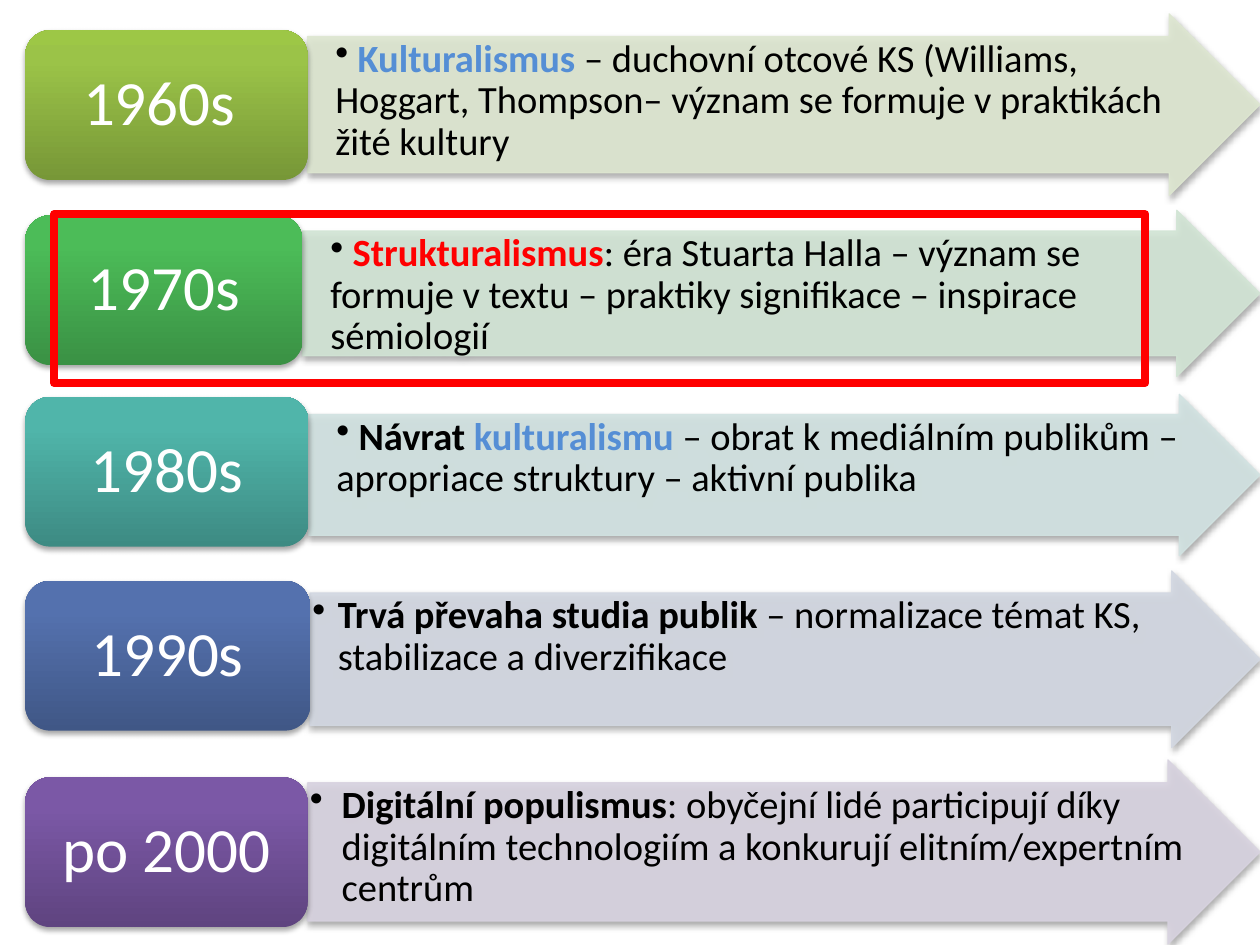
from lxml.etree import SubElement
from pptx import Presentation
from pptx.dml.color import RGBColor
from pptx.enum.shapes import MSO_SHAPE
from pptx.enum.text import MSO_ANCHOR, PP_ALIGN
from pptx.oxml import parse_xml
from pptx.oxml.ns import nsdecls, qn
from pptx.util import Cm, Pt

SLIDE_WIDTH, SLIDE_HEIGHT = 25.4, 19.05
CARD_LEFT, CARD_HEIGHT = 0.51, 3.02
BLACK, WHITE, RED, BLUE = "000000", "FFFFFF", "FF0000", "558ED5"


def rgb(value):
    return RGBColor.from_string(value)


class TimelineSlide:
    """Holds the style and the slide on which the decades are drawn."""

    font_name = "Calibri"
    decade_size = Pt(36)
    detail_size = Pt(22)
    line_spacing = 0.9

    def __init__(self, slide):
        self.slide = slide

    def shape(self, preset, left, top, width, height):
        shape = self.slide.shapes.add_shape(
            preset, Cm(left), Cm(top), Cm(width), Cm(height))
        shape.shadow.inherit = False
        return shape

    def add_shadow(self, shape):
        effects = shape._element.spPr.find(qn("a:effectLst"))
        effects.append(parse_xml(
            f'<a:outerShdw {nsdecls("a")} blurRad="40000" dist="23000" '
            f'dir="5400000" rotWithShape="0"><a:srgbClr val="{BLACK}">'
            '<a:alpha val="35000"/></a:srgbClr></a:outerShdw>'))

    def fill_gradient(self, shape, colours):
        """Fill upwards from the dark bottom colour."""
        stops = "".join(
            f'<a:gs pos="{position}"><a:srgbClr val="{colour}"/></a:gs>'
            for position, colour in zip((0, 80000, 100000), colours))
        shape._element.spPr.find(qn("a:prstGeom")).addnext(parse_xml(
            f'<a:gradFill {nsdecls("a")} rotWithShape="1"><a:gsLst>{stops}'
            '</a:gsLst><a:lin ang="16200000" scaled="0"/></a:gradFill>'))

    def set_frame(self, shape, anchor, side, end):
        frame = shape.text_frame
        frame.word_wrap = True
        frame.vertical_anchor = anchor
        frame.margin_left = frame.margin_right = Cm(side)
        frame.margin_top = frame.margin_bottom = Cm(end)
        return frame.paragraphs[0]

    def style_paragraph(self, paragraph, size, alignment):
        paragraph.alignment = alignment
        paragraph.line_spacing = self.line_spacing
        paragraph.font.name = self.font_name
        paragraph.font.size = size

    def arrow(self, left, top, height, colour, indent, hanging, runs):
        arrow = self.shape(MSO_SHAPE.RIGHT_ARROW, left, top,
                           SLIDE_WIDTH - left, height)
        arrow.adjustments[0] = 0.75
        arrow.adjustments[1] = 0.5
        arrow.fill.solid()
        arrow.fill.fore_color.rgb = rgb(colour)
        arrow.line.color.rgb = rgb(colour)
        arrow.line.width = Pt(0.75)
        for tint in arrow._element.spPr.iter(qn("a:srgbClr")):
            SubElement(tint, qn("a:alpha"), val="90000")
        self.add_shadow(arrow)

        detail = self.set_frame(arrow, MSO_ANCHOR.TOP, 0.05, 0.05)
        detail.level = 1
        properties = detail._p.get_or_add_pPr()
        properties.set("marL", str(Cm(indent)))
        properties.set("indent", str(-Cm(hanging)))
        SubElement(properties, qn("a:buChar"), char="•")
        self.style_paragraph(detail, self.detail_size, PP_ALIGN.LEFT)
        for words, text_colour, bold in runs:
            run = detail.add_run()
            run.text = words
            run.font.bold = bold
            run.font.color.rgb = rgb(text_colour)

    def decade_card(self, top, width, decade, colours):
        card = self.shape(MSO_SHAPE.ROUNDED_RECTANGLE, CARD_LEFT, top,
                          width, CARD_HEIGHT)
        self.fill_gradient(card, colours)
        card.line.fill.background()
        self.add_shadow(card)
        label = self.set_frame(card, MSO_ANCHOR.MIDDLE, 0.38, 0.18)
        label.text = decade
        self.style_paragraph(label, self.decade_size, PP_ALIGN.CENTER)
        label.font.color.rgb = rgb(WHITE)

    def highlight(self, left, top, width, height):
        frame = self.shape(MSO_SHAPE.RECTANGLE, left, top, width, height)
        frame.fill.background()
        frame.line.color.rgb = rgb(RED)
        frame.line.width = Pt(4.5)


# decade, card top, card gradient, arrow (left, top, height, colour,
# indent, hanging), runs (words, colour, bold)
DECADES = [
    ("1960s ", 0.61, ("779737", "9BC348", "9DC746"),
     (6.2, 0.28, 3.66, "DEE7D1", 0.51, 0),
     [(" ", BLACK, True), ("Kulturalismus ", BLUE, True),
      ("– duchovní otcové KS (Williams, Hoggart, Thompson– význam se "
       "formuje v praktikách žité kultury", BLACK, False)]),
    ("1970s", 4.34, ("3A9144", "4CBC58", "4ABF57"),
     (6.1, 4.24, 3.35, "D2E5D5", 0.51, 0),
     [(" ", BLACK, True), ("Strukturalismus", RED, True),
      (": éra Stuarta Halla – význam se formuje v textu – praktiky "
       "signifikace – inspirace sémiologií", BLACK, False)]),
    ("1980s", 8.0, ("3D8B83", "50B5AA", "4EB8AC"),
     (6.22, 7.95, 3.25, "D2E3E2", 0.51, 0),
     [(" Návrat ", BLACK, True), ("kulturalismu ", BLUE, True),
      ("– obrat k mediálním publikům – apropriace struktury – "
       "aktivní publika", BLACK, False)]),
    ("1990s", 11.71, ("405786", "5471AE", "5271B0"),
     (6.25, 11.51, 3.56, "D3D8E2", 0.51, 0.64),
     [("Trvá převaha studia publik ", BLACK, True),
      ("– normalizace témat KS, stabilizace a diverzifikace",
       BLACK, False)]),
    ("po 2000", 15.67, ("5F4480", "7B58A6", "7C57A8"),
     (6.2, 15.32, 3.71, "D8D3E0", 0.64, 0.64),
     [("Digitální populismus", BLACK, True),
      (": obyčejní lidé participují díky digitálním technologiím a "
       "konkurují elitním/expertním centrům", BLACK, False)]),
]


def main():
    presentation = Presentation()
    presentation.slide_width = Cm(SLIDE_WIDTH)
    presentation.slide_height = Cm(SLIDE_HEIGHT)
    timeline = TimelineSlide(
        presentation.slides.add_slide(presentation.slide_layouts[6]))
    for decade, card_top, gradient, arrow, runs in DECADES:
        timeline.arrow(*arrow, runs)
        timeline.decade_card(card_top, arrow[0] - CARD_LEFT, decade, gradient)
    timeline.highlight(1.09, 4.32, 22, 3.4)
    presentation.save("out.pptx")


if __name__ == "__main__":
    main()
